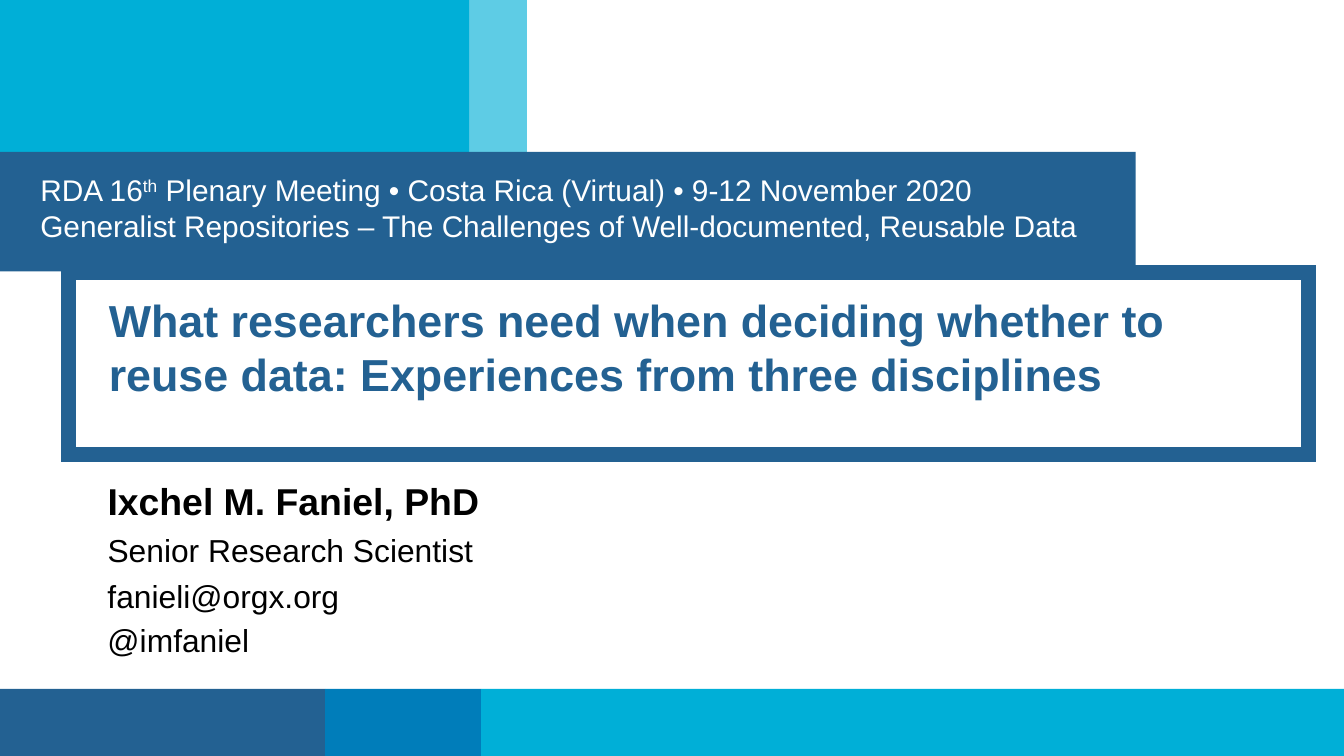
import lxml.etree
import pptx
import pptx.dml.color
import pptx.enum.shapes
import pptx.enum.text
import pptx.oxml.ns
import pptx.util
from pptx.util import Inches, Pt

RGBColor = pptx.dml.color.RGBColor
NAVY = RGBColor(0x23, 0x61, 0x92)
BLUE = RGBColor(0x00, 0x7D, 0xBA)
CYAN = RGBColor(0x00, 0xAF, 0xD7)
WHITE = RGBColor(0xFF, 0xFF, 0xFF)
BLACK = RGBColor(0x00, 0x00, 0x00)

WIDTH = 10
HEIGHT = WIDTH * 9 / 16
FOOTER_HEIGHT = 0.5
FOOTER = [(2.42, NAVY), (1.16, BLUE), (6.42, CYAN)]
TOP_HEIGHT = 1.16

EVENT = [
    [("RDA 16", False), ("th", True),
     (" Plenary Meeting • Costa Rica (Virtual) • 9-12 November 2020", False)],
    [("Generalist Repositories – The Challenges of Well-documented, Reusable Data", False)],
]
TITLE = [[("What researchers need when deciding whether to reuse data: "
           "Experiences from three disciplines", False)]]
CONTACT_LEFT = 0.8
CONTACT_TOP = 3.51
CONTACT = [
    (["Ixchel M. Faniel, PhD"], 2.89, 0.44, 0.05, 20, True),
    (["Senior Research Scientist"], 2.85, 0.34, 0, 17, False),
    (["fanieli@orgx.org", "@imfaniel"], 1.87, 0.68, 0, 17, False),
]


def add_rect(s, left, top, width, height, fill=None, line=None):
    sp = s.shapes.add_shape(pptx.enum.shapes.MSO_SHAPE.RECTANGLE,
                            Inches(left), Inches(top), Inches(width), Inches(height))
    sp.shadow.inherit = False
    if fill is None:
        sp.fill.background()
    else:
        sp.fill.solid()
        sp.fill.fore_color.rgb = fill
    if line is None:
        sp.line.fill.background()
    else:
        sp.line.color.rgb = line
        sp.line.width = Pt(8)
        miter = lxml.etree.SubElement(sp.line._get_or_add_ln(), pptx.oxml.ns.qn("a:miter"))
        miter.set("lim", "800000")
    return sp


def write(sp, paragraphs, margins, size, color, bold=False):
    tf = sp.text_frame
    tf.word_wrap = True
    tf.vertical_anchor = pptx.enum.text.MSO_ANCHOR.TOP
    tf.margin_left, tf.margin_top, tf.margin_right, tf.margin_bottom = map(Inches, margins)
    for i, runs in enumerate(paragraphs):
        p = tf.add_paragraph() if i else tf.paragraphs[0]
        p.alignment = pptx.enum.text.PP_ALIGN.LEFT
        for text, superscript in runs:
            r = p.add_run()
            r.text = text
            r.font.name = "Arial"
            r.font.size = Pt(size)
            r.font.bold = bold
            r.font.color.rgb = color
            if superscript:
                r.font._element.set("baseline", "30000")


prs = pptx.Presentation()
prs.slide_width = Inches(WIDTH)
prs.slide_height = Inches(HEIGHT)
s = prs.slides.add_slide(prs.slide_layouts[6])

left = 0
for width, color in FOOTER:
    add_rect(s, left, HEIGHT - FOOTER_HEIGHT, width, FOOTER_HEIGHT, color)
    left += width

add_rect(s, 0, 0, 3.49, TOP_HEIGHT, CYAN)
accent = add_rect(s, 3.43, 0, 0.49, TOP_HEIGHT, CYAN)
accent_color = accent._element.spPr.find(".//" + pptx.oxml.ns.qn("a:srgbClr"))
lxml.etree.SubElement(accent_color, pptx.oxml.ns.qn("a:alpha")).set("val", "63000")

event_band = add_rect(s, 0, 1.13, 8.45, 0.89, NAVY)
write(event_band, EVENT, (0.3, 0.15, 0.3, 0.2), 16, WHITE)

title_frame = add_rect(s, 0.51, 2.03, 9.23, 1.35, line=NAVY)
write(title_frame, TITLE, (0.3, 0.15, 0.3, 0.3), 24, NAVY, True)

top = CONTACT_TOP
for lines, width, height, inset, size, bold in CONTACT:
    tb = s.shapes.add_textbox(Inches(CONTACT_LEFT), Inches(top), Inches(width), Inches(height))
    write(tb, [[(text, False)] for text in lines], (0, inset, 0.1, 0.05), size, BLACK, bold)
    for p in tb.text_frame.paragraphs[1:]:
        p.space_before = Pt(size * 0.2)
    top += height

prs.save("out.pptx")
